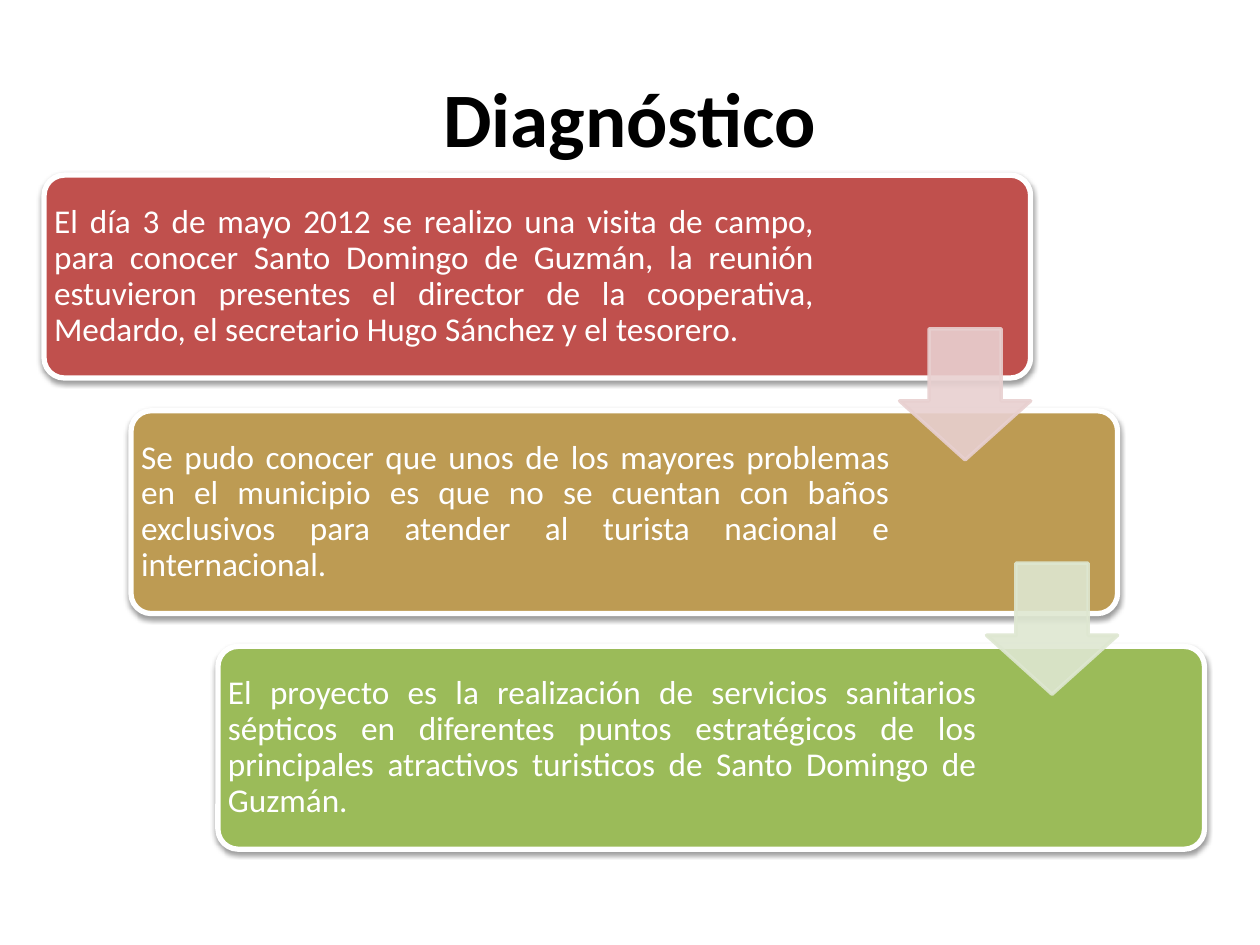
"""Build the Diagnóstico slide: three staggered steps linked by down arrows."""
from dataclasses import dataclass

from lxml.etree import SubElement
from pptx import Presentation
from pptx.dml.color import RGBColor
from pptx.enum.shapes import MSO_SHAPE
from pptx.enum.text import MSO_ANCHOR, PP_ALIGN
from pptx.oxml.ns import qn
from pptx.shapes.autoshape import Shape
from pptx.slide import Slide
from pptx.util import Inches, Pt

FONT = "Calibri"
BLACK = RGBColor(0x00, 0x00, 0x00)
WHITE = RGBColor(0xFF, 0xFF, 0xFF)
RED = RGBColor(0xC0, 0x50, 0x4D)
OCHRE = RGBColor(0xBD, 0x9B, 0x53)
GREEN = RGBColor(0x9B, 0xBB, 0x59)
PALE_RED = RGBColor(0xE8, 0xD0, 0xD0)
PALE_GREEN = RGBColor(0xDE, 0xE7, 0xD1)

STEP_LEFT, STEP_TOP = 0.35, 1.39
STEP_WIDTH, STEP_HEIGHT = 7.83, 1.61
ARROW_LEFT, ARROW_TOP, ARROW_SIZE = 7.14, 2.61, 1.04
SHIFT_X, SHIFT_Y, ARROW_SHIFT_Y = 0.69, 1.87, 1.86


@dataclass(frozen=True)
class Step:
    text: str
    fill: RGBColor
    text_width: float


STEPS = [
    Step("El día 3 de mayo 2012 se realizo una visita de campo, para conocer "
         "Santo Domingo de Guzmán, la reunión estuvieron presentes el director "
         "de la cooperativa, Medardo, el secretario Hugo Sánchez y el tesorero.",
         RED, 6.19),
    Step("Se pudo conocer que unos de los mayores problemas en el municipio es "
         "que no se cuentan con baños exclusivos para atender al turista "
         "nacional e internacional.", OCHRE, 6.1),
    Step("El proyecto es la realización de servicios sanitarios sépticos en "
         "diferentes puntos estratégicos de los principales atractivos "
         "turisticos de Santo Domingo de Guzmán.", GREEN, 6.1),
]
ARROW_COLORS = [PALE_RED, PALE_GREEN]


def add_text(s: Slide, text: str, left: float, top: float, width: float,
             height: float, size: float, color: RGBColor, align: PP_ALIGN,
             inset: float, bold: bool = False, spacing: float = 1.0) -> None:
    tf = s.shapes.add_textbox(Inches(left), Inches(top),
                              Inches(width), Inches(height)).text_frame
    tf.word_wrap = True
    tf.vertical_anchor = MSO_ANCHOR.MIDDLE
    tf.margin_left = tf.margin_right = Inches(inset)
    tf.margin_top = tf.margin_bottom = Inches(min(inset, 0.08))
    p = tf.paragraphs[0]
    p.alignment = align
    p.line_spacing = spacing
    r = p.add_run()
    r.text = text
    r.font.name = FONT
    r.font.size = Pt(size)
    r.font.bold = bold
    r.font.color.rgb = color


def add_filled(s: Slide, kind: MSO_SHAPE, left: float, top: float, width: float,
               height: float, adjustments: list[float], fill: RGBColor,
               line: RGBColor, line_width: float) -> Shape:
    sp = s.shapes.add_shape(kind, Inches(left), Inches(top),
                            Inches(width), Inches(height))
    for i, value in enumerate(adjustments):
        sp.adjustments[i] = value
    sp.shadow.inherit = False
    sp.fill.solid()
    sp.fill.fore_color.rgb = fill
    sp.line.color.rgb = line
    sp.line.width = Pt(line_width)
    return sp


def add_shadow(sp: Shape) -> None:
    effects = sp._element.spPr.find(qn("a:effectLst"))
    shadow = SubElement(effects, qn("a:outerShdw"), blurRad=str(Pt(3.1)),
                        dist=str(Pt(1.6)), dir="5400000", rotWithShape="0")
    color = SubElement(shadow, qn("a:srgbClr"), val=str(BLACK))
    SubElement(color, qn("a:alpha"), val="38000")


def add_step(s: Slide, index: int, step: Step) -> None:
    left = STEP_LEFT + index * SHIFT_X
    top = STEP_TOP + index * SHIFT_Y
    sp = add_filled(s, MSO_SHAPE.ROUNDED_RECTANGLE, left, top, STEP_WIDTH,
                    STEP_HEIGHT, [0.1], step.fill, WHITE, 3)
    add_shadow(sp)
    add_text(s, step.text, left, top, step.text_width, STEP_HEIGHT, 19, WHITE,
             PP_ALIGN.JUSTIFY, inset=0.08, spacing=0.9)


def add_arrow(s: Slide, index: int, color: RGBColor) -> None:
    sp = add_filled(s, MSO_SHAPE.DOWN_ARROW, ARROW_LEFT + index * SHIFT_X,
                    ARROW_TOP + index * ARROW_SHIFT_Y, ARROW_SIZE, ARROW_SIZE,
                    [0.55, 0.45], color, color, 2)
    for clr in sp._element.spPr.iter(qn("a:srgbClr")):
        SubElement(clr, qn("a:alpha"), val="90000")


def main() -> None:
    prs = Presentation()
    prs.slide_width, prs.slide_height = Inches(10), Inches(7.5)
    s = prs.slides.add_slide(prs.slide_layouts[6])
    add_text(s, "Diagnóstico", 0.5, 0.3, 9, 1.25, 44, BLACK, PP_ALIGN.CENTER,
             inset=0.1, bold=True)
    for i, step in enumerate(STEPS):
        add_step(s, i, step)
    for i, color in enumerate(ARROW_COLORS):
        add_arrow(s, i, color)
    prs.save("out.pptx")


if __name__ == "__main__":
    main()
